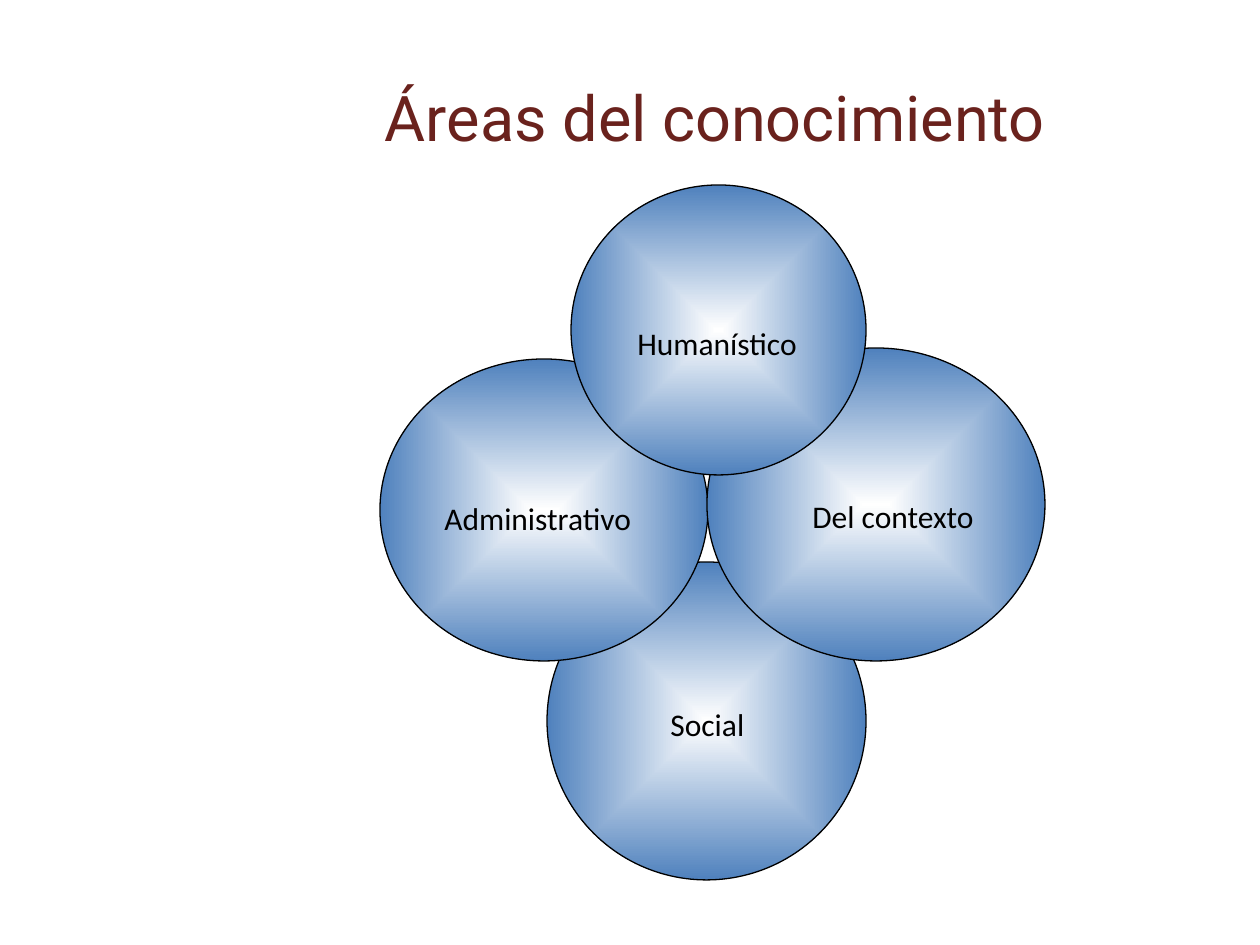
"""Build a slide with four overlapping circles naming areas of knowledge."""
from lxml.etree import SubElement
from pptx import Presentation
from pptx.dml.color import RGBColor
from pptx.enum.shapes import MSO_SHAPE
from pptx.enum.text import MSO_ANCHOR, MSO_AUTO_SIZE, PP_ALIGN
from pptx.oxml.ns import qn
from pptx.util import Emu, Pt

TITLE = "Áreas del conocimiento"
TITLE_BOX = (233, 38, 964, 157)
SOCIAL = ("Social", (547, 562, 319, 318), (658, 699, 194, 50))
UPPER_AREAS = [
    ("Administrativo", (380, 359, 328, 302), (432, 493, 227, 50)),
    ("Del contexto", (707, 348, 338, 313), (800, 491, 207, 50)),
    ("Humanístico", (571, 185, 295, 290), (625, 318, 204, 50)),
]

WHITE = RGBColor(0xFF, 0xFF, 0xFF)
BLUE = RGBColor(0x4F, 0x81, 0xBD)
BLACK = RGBColor(0, 0, 0)
MAROON = RGBColor(0x6A, 0x22, 0x1D)


def px(n):
    return Emu(round(n * 914400 / 126))


def box(lengths):
    return [px(n) for n in lengths]


def add_text(tf, text, font, size, color, align):
    p = tf.paragraphs[0]
    p.alignment = align
    r = p.add_run()
    r.text = text
    r.font.name = font
    r.font.size = Pt(size)
    r.font.color.rgb = color


def add_circle(shapes, bounds):
    sp = shapes.add_shape(MSO_SHAPE.OVAL, *box(bounds))
    sp.shadow.inherit = False
    sp.line.color.rgb = BLACK
    sp.line.width = Pt(0.75)
    sp.fill.gradient()
    for stop, position, color in zip(sp.fill.gradient_stops, (0, 1), (WHITE, BLUE)):
        stop.position = position
        stop.color.rgb = color
    grad = sp._element.spPr.find(qn("a:gradFill"))
    grad.remove(grad.find(qn("a:lin")))
    radial = SubElement(grad, qn("a:path"), {"path": "shape"})
    SubElement(radial, qn("a:fillToRect"), dict.fromkeys("ltrb", "50000"))


def add_label(shapes, text, bounds):
    tf = shapes.add_textbox(*box(bounds)).text_frame
    tf.word_wrap = True
    tf.auto_size = MSO_AUTO_SIZE.SHAPE_TO_FIT_TEXT
    add_text(tf, text, "Calibri", 18, BLACK, PP_ALIGN.LEFT)


def main():
    prs = Presentation()
    prs.slide_width, prs.slide_height = px(1260), px(945)
    s = prs.slides.add_slide(prs.slide_layouts[5])

    title = s.shapes.title
    title.left, title.top, title.width, title.height = box(TITLE_BOX)
    title.text_frame.vertical_anchor = MSO_ANCHOR.MIDDLE
    add_text(title.text_frame, TITLE, "Roboto", 36, MAROON, PP_ALIGN.CENTER)

    social, social_circle, social_label = SOCIAL
    add_circle(s.shapes, social_circle)
    group = s.shapes.add_group_shape().shapes
    for _, circle, _ in UPPER_AREAS:
        add_circle(group, circle)
    for name, _, label in UPPER_AREAS:
        add_label(group, name, label)
    add_label(s.shapes, social, social_label)

    prs.save("out.pptx")


if __name__ == "__main__":
    main()
